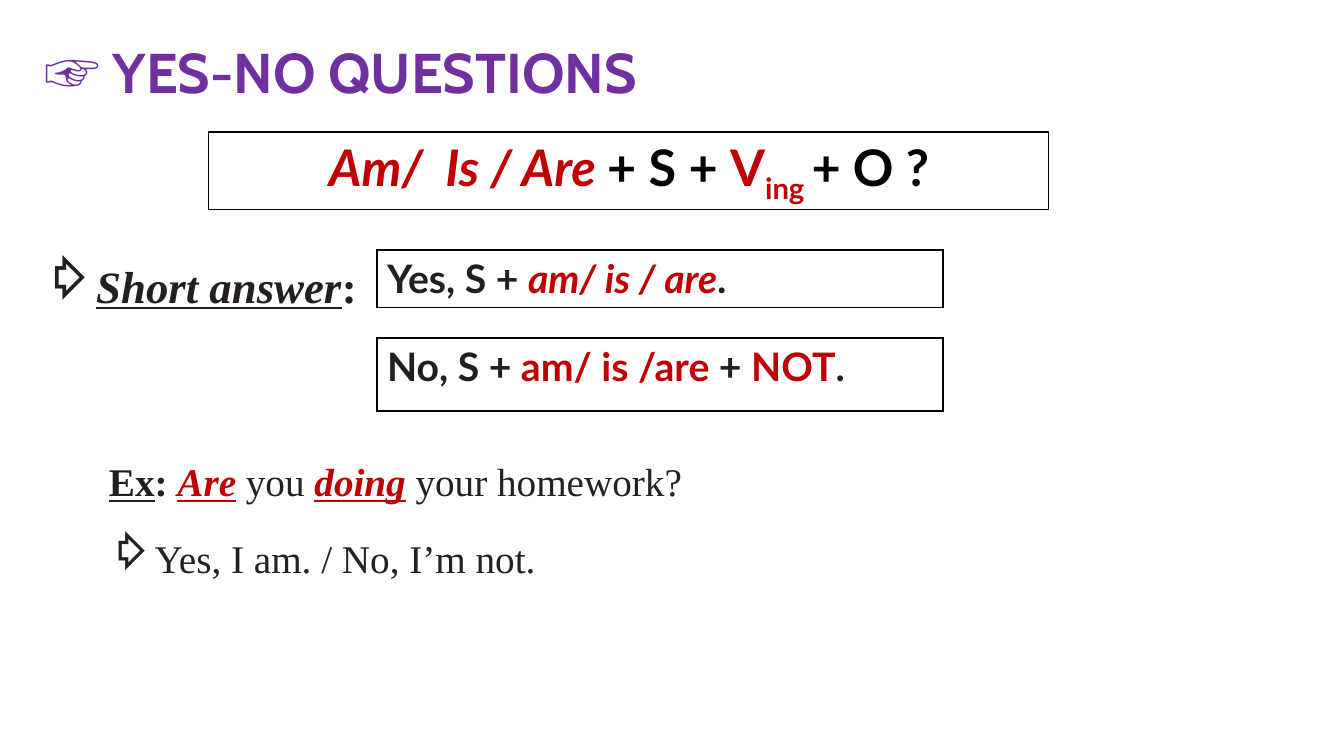
import pptx
import pptx.util
import pptx.dml.color
import pptx.enum.shapes
import pptx.enum.text
import pptx.oxml.ns
import lxml.etree

SCALE = 914400 / 100.8  # EMU in one px
HUES = {"purple": "7030A0", "red": "C00000", "ink": "231F20",
        "grey": "222222", "black": "000000", "white": "FFFFFF"}
SERIF, SANS = "Times New Roman", "Lato"
ALIGN = pptx.enum.text.PP_ALIGN
ANCHOR = pptx.enum.text.MSO_ANCHOR


def px(num):
    return pptx.util.Emu(round(num * SCALE))


def rgb(hue):
    return pptx.dml.color.RGBColor.from_string(HUES[hue])


def child(node, tag, **attrs):
    return lxml.etree.SubElement(node, pptx.oxml.ns.qn(tag), attrs)


def write(para, runs, name, size, hue="ink", bold=False):
    """Each run is (text, hue or None, marks): b, i, u, or s for subscript."""
    font = para.font
    font.name, font.size, font.bold = name, pptx.util.Pt(size), bold
    font.color.rgb = rgb(hue)
    for text, tint, marks in runs:
        run = para.add_run()
        run.text = text
        if tint:
            run.font.color.rgb = rgb(tint)
        if "b" in marks:
            run.font.bold = True
        if "i" in marks:
            run.font.italic = True
        if "u" in marks:
            run.font.underline = True
        if "s" in marks:
            run.font._element.set("baseline", "-25000")


def add_title(slide, box):
    title = slide.shapes.title
    title.left, title.top, title.width, title.height = map(px, box)
    frame = title.text_frame
    frame.auto_size = pptx.enum.text.MSO_AUTO_SIZE.NONE
    frame.vertical_anchor = ANCHOR.MIDDLE
    para = frame.paragraphs[0]
    para.alignment = ALIGN.LEFT
    write(para, [("☞ ", None, ""), ("YES-NO QUESTIONS", None, "")],
          "Cabin", 40, "purple", True)
    para.runs[0].font.name = "Noto Sans CJK JP"


def add_rule(slide, box, runs):
    rect = slide.shapes.add_shape(
        pptx.enum.shapes.MSO_SHAPE.RECTANGLE, *map(px, box))
    rect.shadow.inherit = False
    rect.fill.solid()
    rect.fill.fore_color.rgb = rgb("white")
    rect.line.color.rgb = rgb("black")
    rect.line.width = pptx.util.Pt(0.75)
    rect.text_frame.vertical_anchor = ANCHOR.MIDDLE
    para = rect.text_frame.paragraphs[0]
    para.alignment = ALIGN.CENTER
    write(para, runs, SANS, 36, "black", True)


def add_note(slide, box, size, lines):
    """Each line is (arrow bullet or not, runs)."""
    frame = slide.shapes.add_textbox(*map(px, box)).text_frame
    frame.word_wrap = True
    for num, (arrow, runs) in enumerate(lines):
        para = frame.add_paragraph() if num else frame.paragraphs[0]
        if arrow:
            props = para._p.get_or_add_pPr()
            props.set("marL", str(px(38)))
            props.set("indent", str(-px(38)))
            child(props, "a:buChar", char="⇨")
        para.line_spacing = 1.27
        para.space_before = para.space_after = pptx.util.Pt(6)
        write(para, runs, SERIF, size)


def add_reply(slide, box, runs):
    table = slide.shapes.add_table(1, 1, *map(px, box)).table
    table.first_row = table.horz_banding = False
    cell = table.cell(0, 0)
    props = cell._tc.get_or_add_tcPr()
    for side in "LRTB":
        line = child(props, "a:ln" + side, w=str(pptx.util.Pt(1)))
        fill = child(line, "a:solidFill")
        child(fill, "a:srgbClr", val=HUES["black"])
    cell.fill.background()
    write(cell.text_frame.paragraphs[0], runs, SANS, 28, bold=True)


def main():
    deck = pptx.Presentation()
    deck.slide_width, deck.slide_height = px(1344), px(756)
    slide = deck.slides.add_slide(deck.slide_layouts[5])

    # Heading and question form
    add_title(slide, (34, 32, 840, 78))
    add_rule(slide, (209, 132, 840, 78), [
        ("Am/  Is / Are ", "red", "i"), ("+ S + ", None, ""),
        ("V", "red", ""), ("ing ", "red", "s"), ("+ O ?", None, "")])

    # Short answers
    add_note(slide, (34, 239, 374, 73), 32, [
        (True, [("Short answer", None, "biu"), (":", None, "b")])])
    add_reply(slide, (377, 250, 566, 57), [
        ("Yes, S + ", None, ""), ("am/ is / are", "red", "i"),
        (".", None, "")])
    add_reply(slide, (377, 338, 566, 73), [
        ("No, S + ", None, ""), ("am/ is /are ", "red", ""),
        ("+ ", None, ""), ("NOT", "red", ""), (".", None, "")])

    # Example
    add_note(slide, (99, 440, 685, 142), 28, [
        (False, [("Ex", None, "bu"), (": ", None, "b"),
                 ("Are", "red", "biu"), (" you ", "grey", ""),
                 ("doing", "red", "biu"),
                 (" your homework? ", "grey", "")]),
        (True, [("Yes, I am. / No, I’m not.", "grey", "")])])

    deck.save("out.pptx")


if __name__ == "__main__":
    main()
